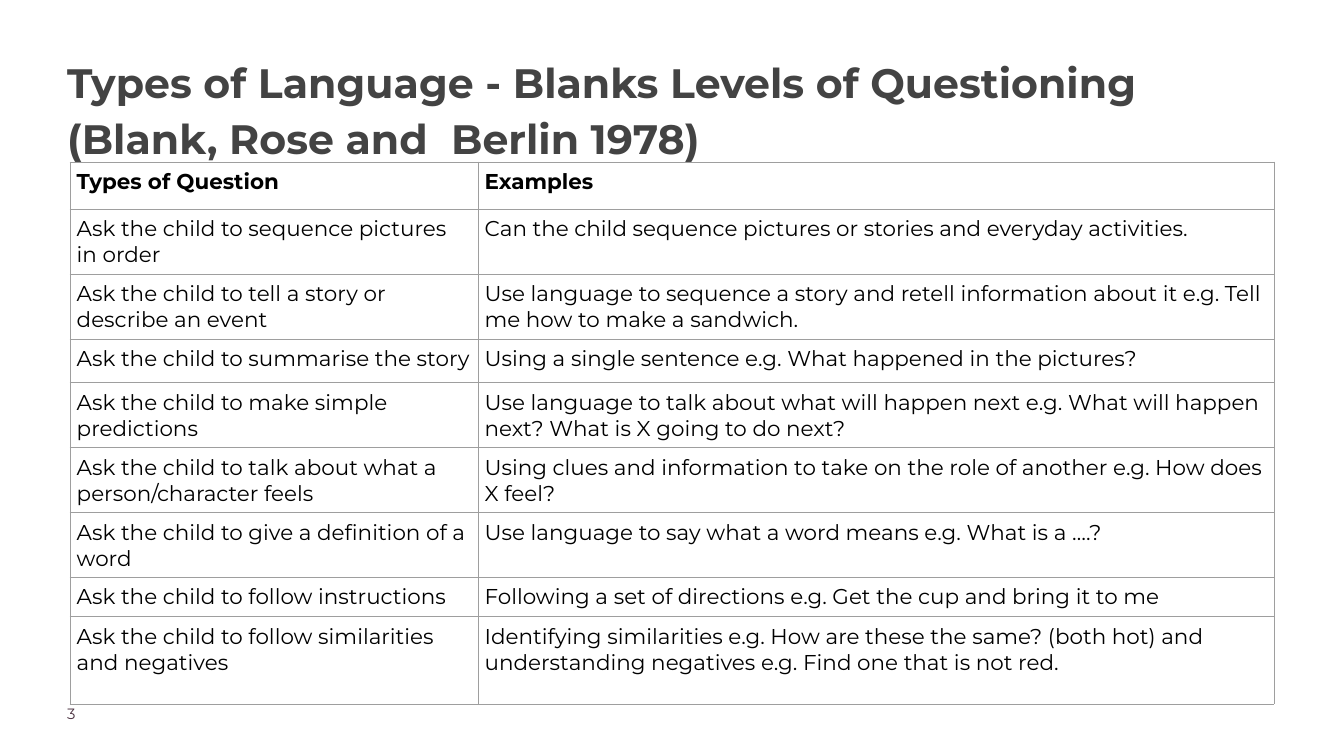
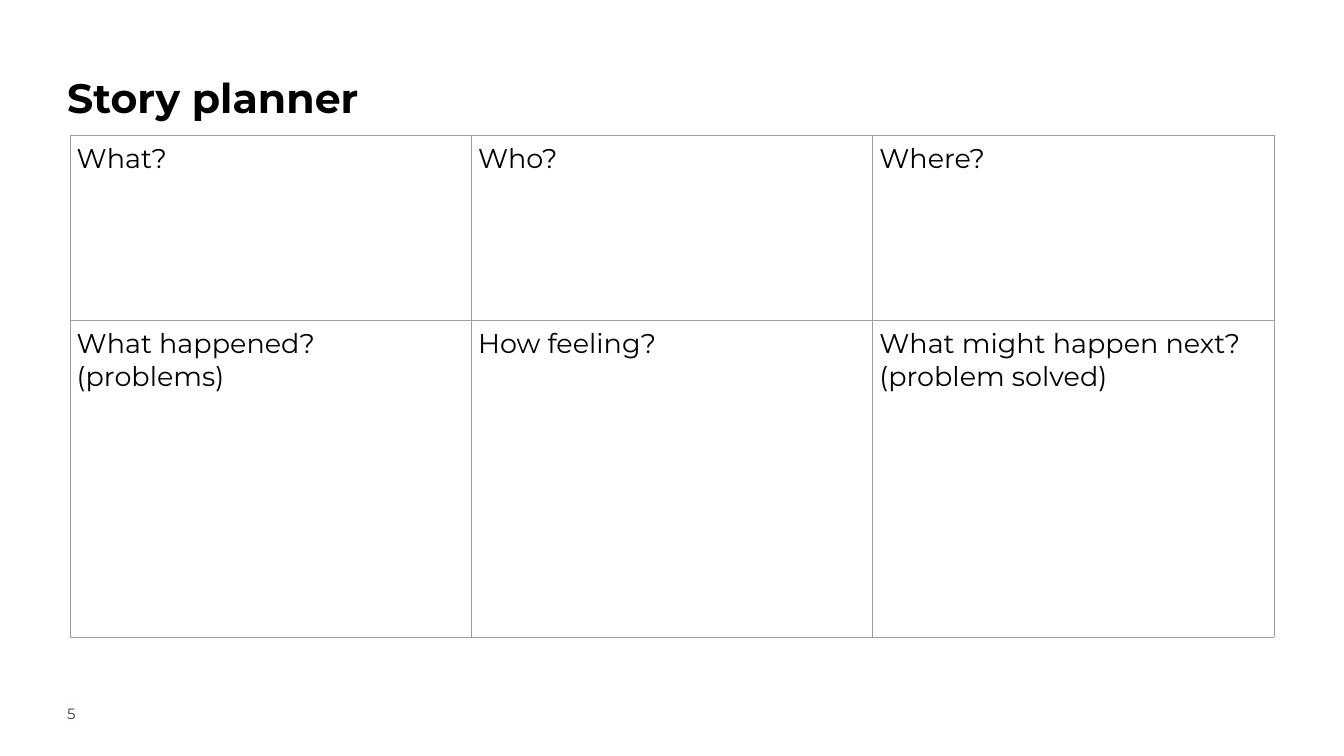
"""Build two slides: a table of question levels and a story planner grid."""
from dataclasses import dataclass

import pptx
import pptx.dml.color
import pptx.oxml
import pptx.oxml.ns
import pptx.presentation
import pptx.slide
import pptx.table
import pptx.text.text
import pptx.util

Pt = pptx.util.Pt
RGBColor = pptx.dml.color.RGBColor

FONT = "Montserrat"
BLACK = RGBColor(0x00, 0x00, 0x00)
WHITE = RGBColor(0xFF, 0xFF, 0xFF)
CHARCOAL = RGBColor(0x43, 0x43, 0x43)
PLUM = RGBColor(0x4B, 0x32, 0x41)
RULE_GREY = RGBColor(0x9E, 0x9E, 0x9E)

MARGIN = 72
TABLE_LEFT = 75
RULE_WIDTH = 0.75
CELL_INSET = 7.2


@dataclass(frozen=True)
class Label:
    """A line of text with its frame and style."""

    text: str
    top: float
    width: float
    height: float
    size: float
    color: RGBColor
    bold: bool = False


@dataclass(frozen=True)
class Grid:
    """A ruled table with its measures and wording."""

    top: float
    widths: list[float]
    heights: list[float]
    rows: list[tuple[str, ...]]
    size: float
    bold_rows: tuple[int, ...] = ()
    white_rows: tuple[int, ...] = ()


@dataclass(frozen=True)
class Page:
    """The title, number and table of one slide."""

    title: Label
    number: int
    grid: Grid


QUESTION_ROWS = [
    ("Types of Question", "Examples"),
    ("Ask the child to sequence pictures in order",
     "Can the child sequence pictures or stories and everyday activities."),
    ("Ask the child to tell a story or describe an event",
     "Use language to sequence a story and retell information about it e.g. "
     "Tell me how to make a sandwich."),
    ("Ask the child to summarise the story",
     "Using a single sentence e.g. What happened in the pictures?"),
    ("Ask the child to make simple predictions",
     "Use language to talk about what will happen next e.g. "
     "What will happen next? What is X going to do next?"),
    ("Ask the child to talk about what a person/character feels",
     "Using clues and information to take on the role of another e.g. "
     "How does X feel?"),
    ("Ask the child to give a definition of a word",
     "Use language to say what a word means e.g. What is a ….?"),
    ("Ask the child to follow instructions",
     "Following a set of directions e.g. Get the cup and bring it to me"),
    ("Ask the child to follow similarities and negatives",
     "Identifying similarities e.g. How are these the same? (both hot) and "
     "understanding negatives e.g. Find one that is not red."),
]
PLANNER_ROWS = [
    ("What?", "Who?", "Where?"),
    ("What happened? (problems)", "How feeling?",
     "What might happen next? (problem solved)"),
]
PAGES = [
    Page(
        Label("Types of Language - Blanks Levels of Questioning "
              "(Blank, Rose and  Berlin 1978)",
              53.3, 1290, 76, 44, CHARCOAL, True),
        3,
        Grid(173.5, [437, 853],
             [50.4, 51, 67, 46.8, 67, 67, 40.3, 40.3, 93.6],
             QUESTION_ROWS, 23, bold_rows=(0,), white_rows=(1, 7, 8)),
    ),
    Page(
        Label("Story planner", 69.8, 1040, 128, 44, BLACK, True),
        5,
        Grid(144.7, [430] * 3, [198.7, 339.1], PLANNER_ROWS, 29),
    ),
]


def style_paragraph(para: pptx.text.text._Paragraph, size: float,
                    color: RGBColor, bold: bool) -> None:
    """Set the font of a whole paragraph."""
    para.font.name = FONT
    para.font.size = Pt(size)
    para.font.bold = bold
    para.font.color.rgb = color


def add_label(slide: pptx.slide.Slide, label: Label,
              spacing: float = 1.0) -> None:
    """Add a wrapping text box without insets at the left margin."""
    box = slide.shapes.add_textbox(Pt(MARGIN), Pt(label.top),
                                   Pt(label.width), Pt(label.height))
    frame = box.text_frame
    frame.word_wrap = True
    frame.margin_left = frame.margin_right = 0
    frame.margin_top = frame.margin_bottom = 0
    para = frame.paragraphs[0]
    para.text = label.text
    para.line_spacing = spacing
    style_paragraph(para, label.size, label.color, label.bold)


def rule_cell(cell: pptx.table._Cell) -> None:
    """Draw a thin grey line on all four sides of a cell."""
    properties = cell._tc.get_or_add_tcPr()
    for side in "LRTB":
        properties.append(pptx.oxml.parse_xml(
            f'<a:ln{side} {pptx.oxml.ns.nsdecls("a")} w="{Pt(RULE_WIDTH)}">'
            f'<a:solidFill><a:srgbClr val="{RULE_GREY}"/></a:solidFill>'
            f'</a:ln{side}>'))


def add_grid(slide: pptx.slide.Slide, grid: Grid) -> None:
    """Add a ruled table."""
    table = slide.shapes.add_table(
        len(grid.heights), len(grid.widths), Pt(TABLE_LEFT), Pt(grid.top),
        Pt(sum(grid.widths)), Pt(sum(grid.heights))).table
    table.first_row = table.horz_banding = False
    for column, width in zip(table.columns, grid.widths):
        column.width = Pt(width)
    for index, (row, height) in enumerate(zip(table.rows, grid.heights)):
        row.height = Pt(height)
        for cell, text in zip(row.cells, grid.rows[index]):
            cell.margin_left = cell.margin_right = Pt(CELL_INSET)
            cell.margin_top = cell.margin_bottom = Pt(CELL_INSET)
            rule_cell(cell)
            if index in grid.white_rows:
                cell.fill.solid()
                cell.fill.fore_color.rgb = WHITE
            else:
                cell.fill.background()
            cell.text = text
            style_paragraph(cell.text_frame.paragraphs[0], grid.size, BLACK,
                            index in grid.bold_rows)


def add_page(deck: pptx.presentation.Presentation, page: Page) -> None:
    """Add a slide with its number, title and table."""
    slide = deck.slides.add_slide(deck.slide_layouts[6])
    add_label(slide, Label(str(page.number), 754.6, 113, 28, 16, PLUM))
    add_label(slide, page.title, spacing=1.15)
    add_grid(slide, page.grid)


def main() -> None:
    """Build and save the deck."""
    deck = pptx.Presentation()
    deck.slide_width = Pt(1440)
    deck.slide_height = Pt(810)
    for page in PAGES:
        add_page(deck, page)
    deck.save("out.pptx")


if __name__ == "__main__":
    main()
